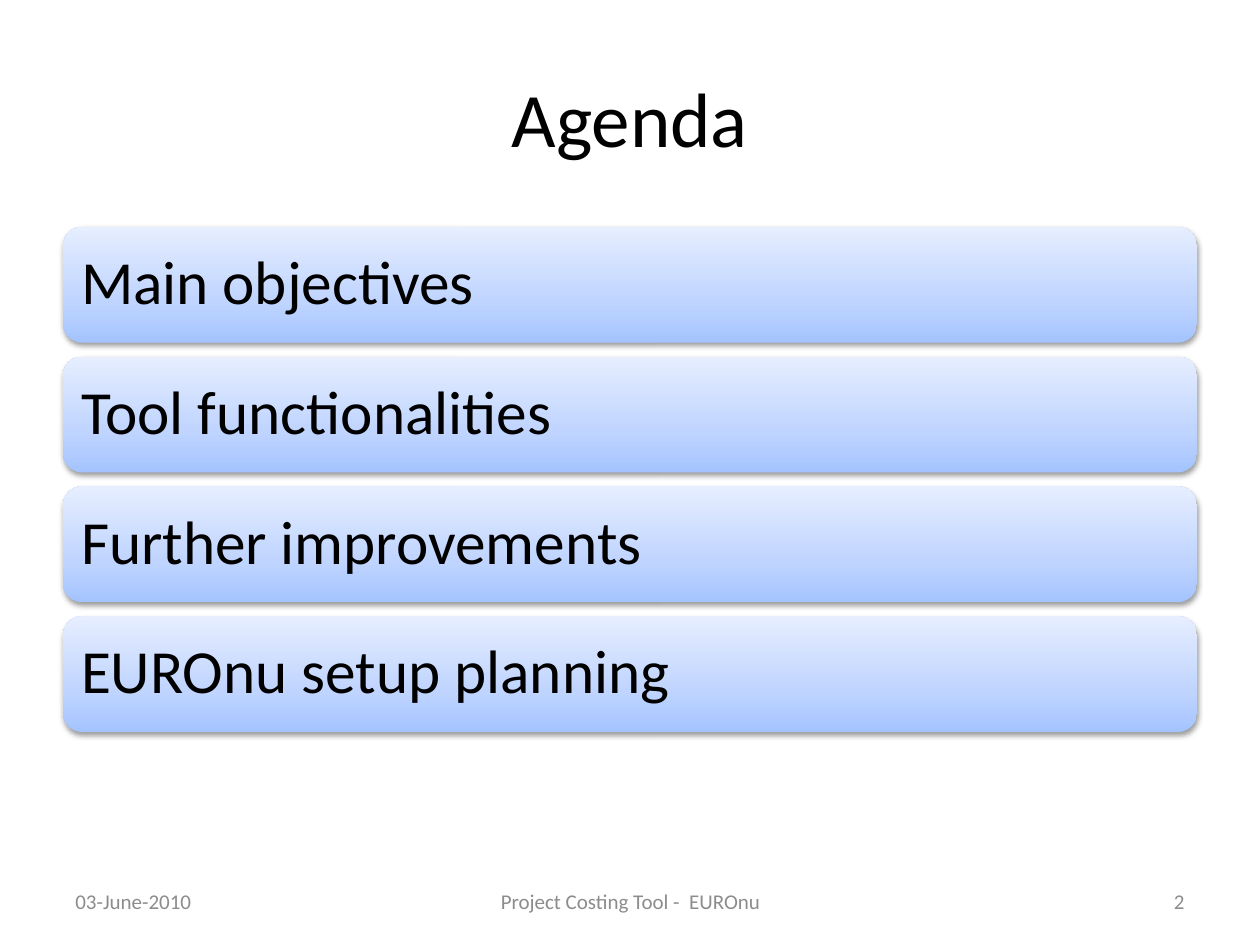
"""Build the agenda slide with four gradient bars and a footer."""
import pptx
import pptx.dml.color
import pptx.enum.shapes
import pptx.enum.text
import pptx.oxml
import pptx.oxml.ns
import pptx.util

PX = 9144
COLORS = {"text": "000000", "footer": "8C8C8C", "shadow": "000000",
          "low": "A4C4FF", "mid": "BFD4FF", "high": "E6EEFF"}
ALIGN = pptx.enum.text.PP_ALIGN
NS = pptx.oxml.ns.nsdecls("a")


def write(shape, text, size, color, align, side=10, edge=5):
    frame = shape.text_frame
    layout = {"word_wrap": True,
              "vertical_anchor": pptx.enum.text.MSO_ANCHOR.MIDDLE,
              "margin_left": side * PX, "margin_right": side * PX,
              "margin_top": edge * PX, "margin_bottom": edge * PX}
    for name, value in layout.items():
        setattr(frame, name, value)
    para = frame.paragraphs[0]
    para.alignment = align
    span = para.add_run()
    span.text = text
    for name, value in {"name": "Calibri", "size": pptx.util.Pt(size)}.items():
        setattr(span.font, name, value)
    span.font.color.rgb = pptx.dml.color.RGBColor.from_string(COLORS[color])
    return para


deck = pptx.Presentation()
deck.slide_width, deck.slide_height = 1000 * PX, 750 * PX
page = deck.slides.add_slide(deck.slide_layouts[6])

labels = [
    ("Agenda", 50, 30, 900, 125, 44, "text", ALIGN.CENTER),
    ("03-June-2010", 50, 695, 233, 40, 12, "footer", ALIGN.LEFT),
    ("Project Costing Tool -  EUROnu", 342, 695, 317, 40, 12, "footer", ALIGN.CENTER),
    ("2", 717, 695, 233, 40, 12, "footer", ALIGN.RIGHT),
]
for text, left, top, width, height, size, color, align in labels:
    box = page.shapes.add_textbox(left * PX, top * PX, width * PX, height * PX)
    write(box, text, size, color, align)

topics = ["Main objectives", "Tool functionalities",
          "Further improvements", "EUROnu setup planning"]
stops = [(0, "low"), (35, "mid"), (100, "high")]
for row, topic in enumerate(topics):
    bar = page.shapes.add_shape(
        pptx.enum.shapes.MSO_SHAPE.ROUNDED_RECTANGLE,
        50 * PX, (180 + row * 103) * PX, 900 * PX, 92 * PX)
    bar.line.fill.background()
    bar.fill.gradient()
    bar.fill.gradient_angle = 90
    stop_list = bar.element.spPr.find(".//" + pptx.oxml.ns.qn("a:gsLst"))
    for old in list(stop_list):
        stop_list.remove(old)
    for position, color in stops:
        stop_list.append(pptx.oxml.parse_xml(
            f'<a:gs {NS} pos="{position * 1000}"><a:srgbClr val="{COLORS[color]}"/></a:gs>'))
    bar.shadow.inherit = False
    bar.element.spPr.find(pptx.oxml.ns.qn("a:effectLst")).append(pptx.oxml.parse_xml(
        f'<a:outerShdw {NS} blurRad="40000" dist="20000" dir="5400000" rotWithShape="0">'
        f'<a:srgbClr val="{COLORS["shadow"]}"><a:alpha val="38000"/></a:srgbClr>'
        '</a:outerShdw>'))
    para = write(bar, topic, 35, "text", ALIGN.LEFT, side=10, edge=10)
    para.line_spacing = 0.9

deck.save("out.pptx")
